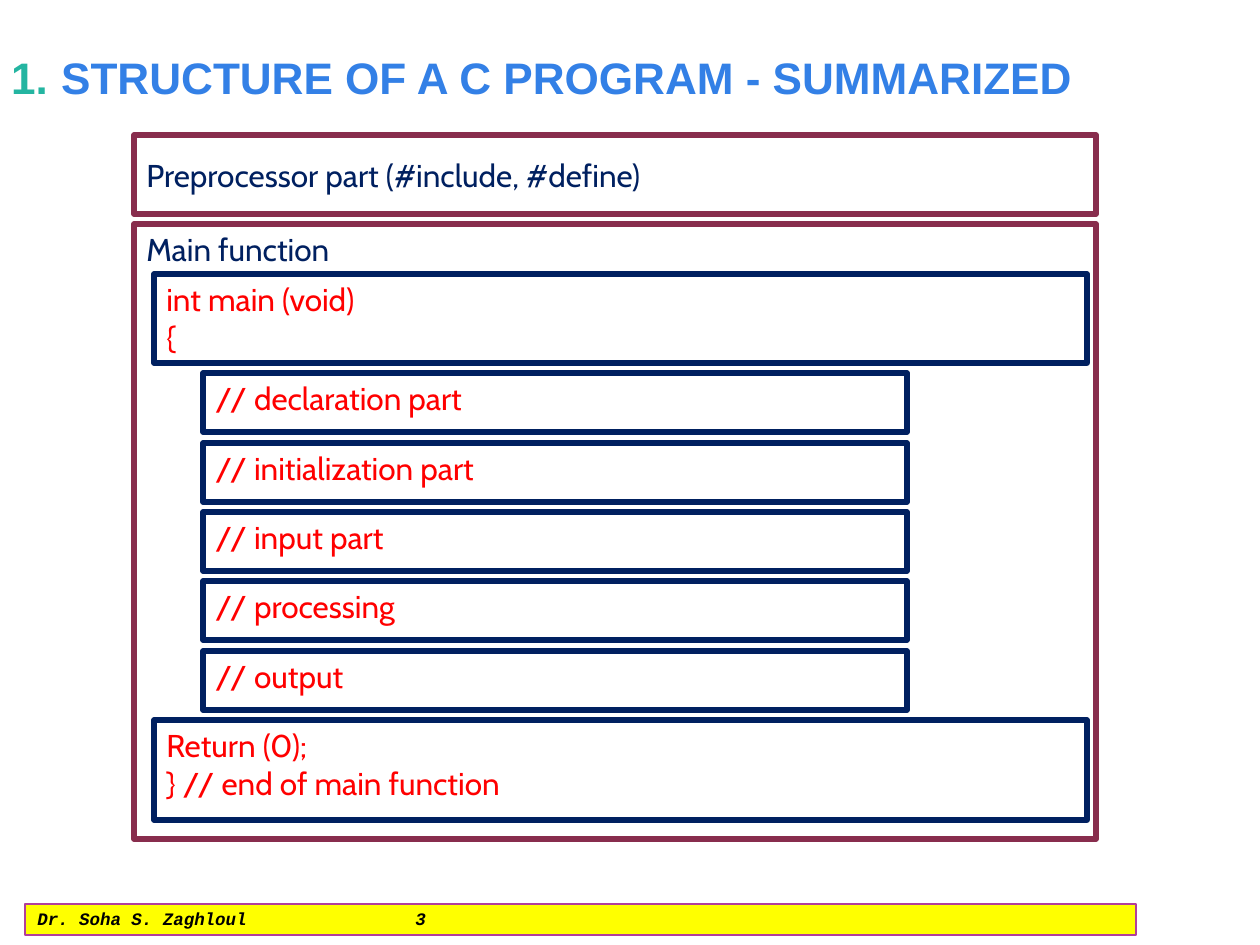
"""Build the slide that sums up the structure of a C program."""
from pptx import Presentation
from pptx.dml.color import RGBColor
from pptx.enum.shapes import MSO_SHAPE as Shape
from pptx.enum.text import MSO_ANCHOR as Anchor, MSO_AUTO_SIZE as Auto, PP_ALIGN as Align
from pptx.util import Emu, Pt


def px(n):
    return Emu(round(n * 914400 / 126))


def tint(code):
    return RGBColor.from_string(code)


deck = Presentation()
deck.slide_width, deck.slide_height = px(1260), px(945)
slide = deck.slides.add_slide(deck.slide_layouts[5])

title = slide.shapes.title
title.left, title.top, title.width, title.height = px(5), px(16), px(1121), px(91)
frame = title.text_frame
frame.auto_size = Auto.NONE
frame.word_wrap = True
frame.vertical_anchor = Anchor.BOTTOM
frame.margin_left = frame.margin_right = px(6)
frame.margin_top = frame.margin_bottom = 0
head = frame.paragraphs[0]
head.alignment = Align.LEFT
for text, size, face, color in [
    ("1.", 25.2, "Arial", "24B5A1"),
    (" ", 34.2, "Cabin", "FBCF9C"),
    ("STRUCTURE OF A C PROGRAM - SUMMARIZED", 25.2, "Arial", "3380E6"),
]:
    run = head.add_run()
    run.text = text
    run.font.size, run.font.name, run.font.bold = Pt(size), face, True
    run.font.color.rgb = tint(color)

wine, navy, red = "882D4D", "002060", "FF0000"
top, mid, low = Anchor.TOP, Anchor.MIDDLE, Anchor.BOTTOM
parts = ["declaration part", "initialization part", "input part", "processing", "output"]
boxes = [
    (134, 135, 962, 79, wine, navy, mid, "Preprocessor part (#include, #define)"),
    (134, 224, 962, 615, wine, navy, top, "Main function"),
    (154, 274, 933, 89, navy, red, top, "int main (void)\n{"),
    (154, 720, 933, 100, navy, red, top, "Return (0);\n} // end of main function"),
]
for i, part in enumerate(parts):
    boxes.append((203, 373 + round(69.5 * i), 704, 59, navy, red, top, "// " + part))
foot = (25, 904, 1111, 31, "B13F9A", "000000", low, "Dr. Soha S. Zaghloul\t\t\t3\t")

for box in boxes + [foot]:
    x, y, w, h, edge, ink, anchor, text = box
    last = box is foot
    rect = slide.shapes.add_shape(Shape.RECTANGLE, px(x), px(y), px(w), px(h))
    rect.shadow.inherit = False
    rect.fill.solid()
    rect.fill.fore_color.rgb = tint("FFFF00" if last else "FFFFFF")
    rect.line.color.rgb = tint(edge)
    rect.line.width = Pt(0.75 if last else 3.15)
    frame = rect.text_frame
    frame.word_wrap = True
    frame.vertical_anchor = anchor
    frame.text = text
    for para in frame.paragraphs:
        para.alignment = Align.LEFT
        for run in para.runs:
            font = run.font
            font.name = "Courier New" if last else "Cabin"
            font.size = Pt(10 if last else 18)
            font.bold = font.italic = last
            font.color.rgb = tint(ink)

deck.save("out.pptx")
